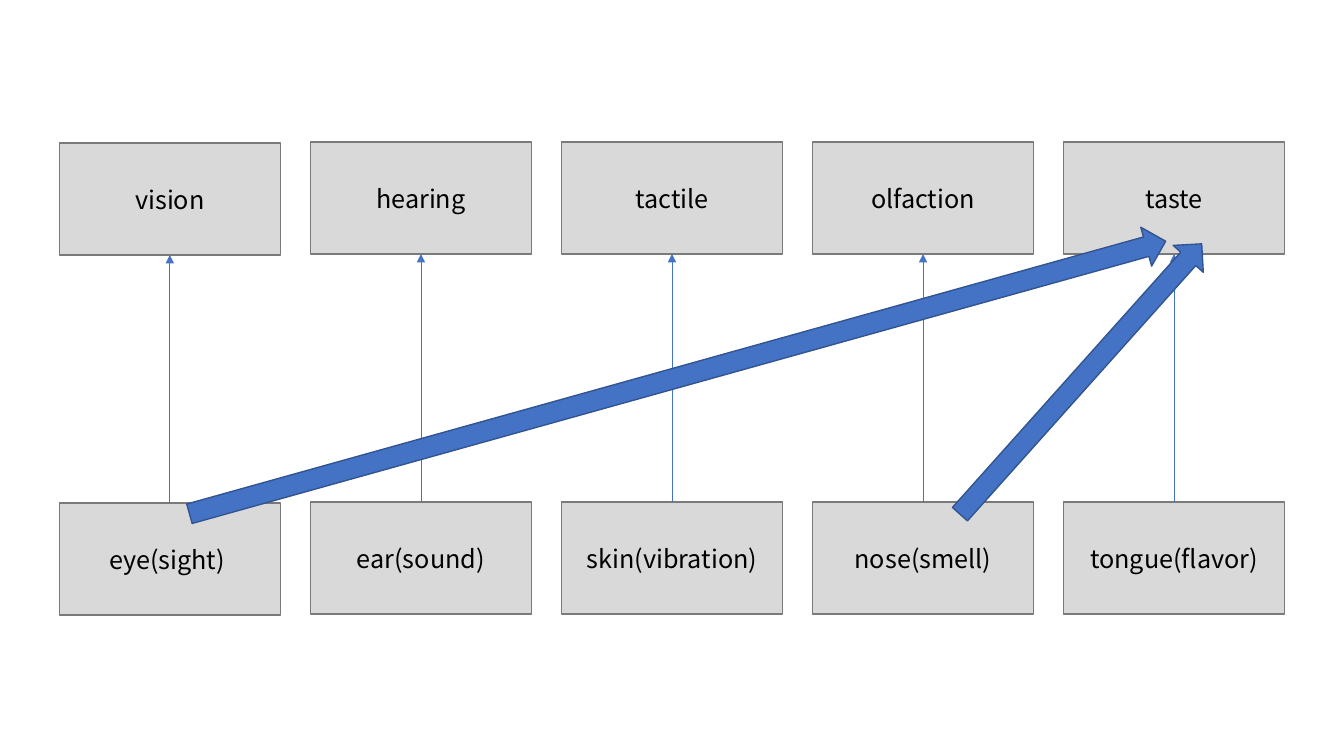
import math
from dataclasses import dataclass

from lxml import etree
from pptx import Presentation
from pptx import util as u
from pptx.dml.color import RGBColor
from pptx.enum import shapes, text
from pptx.oxml.ns import qn

PX = 9144  # one px is a hundredth of an inch


@dataclass(frozen=True)
class Theme:
    font: str = "Noto Sans CJK JP"
    size: int = 18
    ink: str = "000000"
    box_fill: str = "D9D9D9"
    box_line: str = "7A7A7A"
    accent: str = "4472C4"
    accent_line: str = "325491"


@dataclass(frozen=True)
class Box:
    left: int
    top: int
    width: int
    height: int


THEME = Theme()
DIAGRAM = Box(59, 141, 1215, 468)
BOX_WIDTH, BOX_HEIGHT = 219, 111
FIRST_COLUMN_DROP = 1
SENSES = [
    ("vision", "eye(sight) "),
    ("hearing", "ear(sound)"),
    ("tactile", "skin(vibration)"),
    ("olfaction", "nose(smell)"),
    ("taste", "tongue(flavor)"),
]


def px(value):
    return u.Emu(round(value * PX))


def write(shape, words, *, size=THEME.size, color=THEME.ink, align=text.PP_ALIGN.CENTER):
    frame = shape.text_frame
    frame.word_wrap = True
    frame.vertical_anchor = text.MSO_ANCHOR.MIDDLE
    para = frame.paragraphs[0]
    para.alignment = align
    span = para.add_run()
    span.text = words
    span.font.name = THEME.font
    span.font.size = u.Pt(size)
    span.font.color.rgb = RGBColor.from_string(color)


def add_block(page, kind, box, fill, line):
    shape = page.shapes.add_shape(
        kind, px(box.left), px(box.top), px(box.width), px(box.height))
    shape.shadow.inherit = False
    shape.fill.solid()
    shape.fill.fore_color.rgb = RGBColor.from_string(fill)
    shape.line.color.rgb = RGBColor.from_string(line)
    shape.line.width = u.Pt(1)
    return shape


def add_sense_box(page, box, words):
    shape = add_block(page, shapes.MSO_SHAPE.RECTANGLE, box,
                      THEME.box_fill, THEME.box_line)
    write(shape, words)


def add_thin_arrow(page, organ, sense):
    """Line from the top of the organ up to the bottom of the sense."""
    center = px(organ.left + organ.width / 2)
    arrow = page.shapes.add_connector(
        shapes.MSO_CONNECTOR.STRAIGHT, center, px(organ.top),
        center, px(sense.top + sense.height))
    arrow.line.color.rgb = RGBColor.from_string(THEME.accent)
    arrow.line.width = u.Pt(0.5)
    etree.SubElement(arrow.line._get_or_add_ln(), qn("a:tailEnd"), type="triangle")
    etree.SubElement(arrow._element.spPr, qn("a:effectLst"))


def add_thick_arrow(page, tail, tip, width=40):
    """Block arrow turned to run from tail to tip."""
    across, rise = tip[0] - tail[0], tail[1] - tip[1]
    length = math.hypot(across, rise)
    middle_x, middle_y = (tail[0] + tip[0]) / 2, (tail[1] + tip[1]) / 2
    box = Box(middle_x - width / 2, middle_y - length / 2, width, length)
    arrow = add_block(page, shapes.MSO_SHAPE.UP_ARROW, box,
                      THEME.accent, THEME.accent_line)
    arrow.rotation = round(math.degrees(math.atan2(across, rise)), 1)


def add_senses_diagram(page, area):
    pitch = (area.width - BOX_WIDTH) / (len(SENSES) - 1)
    organ_top = area.top + area.height - BOX_HEIGHT
    columns = []
    for index in range(len(SENSES)):
        left = area.left + index * pitch
        drop = FIRST_COLUMN_DROP if index == 0 else 0
        columns.append([Box(left, top + drop, BOX_WIDTH, BOX_HEIGHT)
                        for top in (area.top, organ_top)])

    # Organs below, senses above
    for row in (1, 0):
        for boxes, words in zip(columns, SENSES):
            add_sense_box(page, boxes[row], words[row])

    # Each organ feeds its own sense
    for sense, organ in columns:
        add_thin_arrow(page, organ, sense)

    # Sight and smell also feed taste
    taste = columns[-1][0]
    for source, tail_x, tip_x, tip_y in ((0, 129, 101, 98), (3, 146, 137, 101)):
        organ = columns[source][1]
        add_thick_arrow(page, (organ.left + tail_x, organ_top + 12),
                        (taste.left + tip_x, taste.top + tip_y))


def main():
    deck = Presentation()
    deck.slide_width, deck.slide_height = px(1333), px(750)
    page = deck.slides.add_slide(deck.slide_layouts[6])
    add_senses_diagram(page, DIAGRAM)
    deck.save("out.pptx")


if __name__ == "__main__":
    main()
